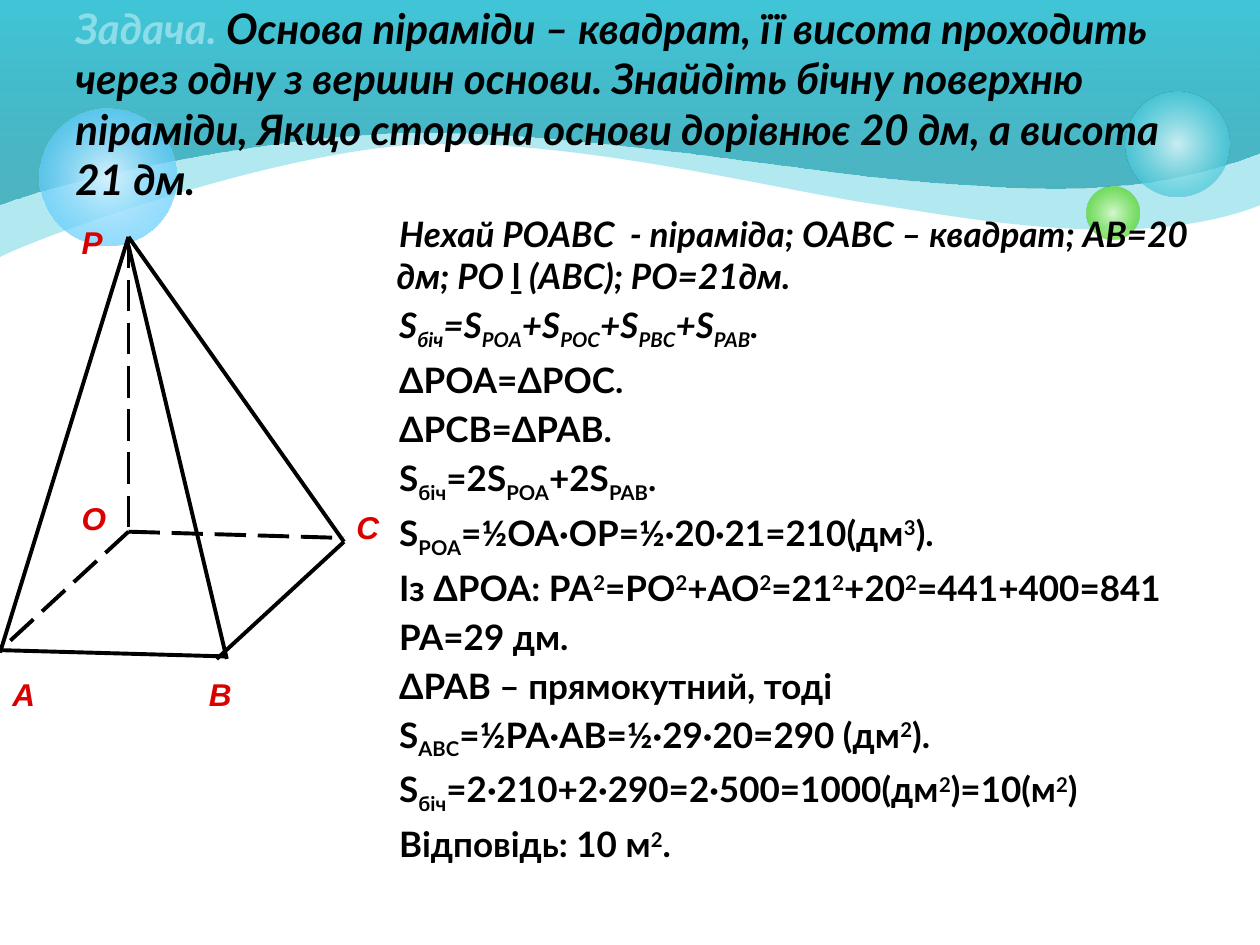
from lxml import etree
from pptx import Presentation
from pptx.dml.color import RGBColor
from pptx.enum import dml, shapes, text
from pptx.oxml import parse_xml
from pptx.oxml.ns import nsdecls, qn
from pptx.util import Inches, Pt

COLORS = {"black": "000000", "red": "DA0000", "pale": "8CDDE8",
          "aqua": "40C6D8", "teal": "249EAE", "mist": "D9F4F7",
          "lime": "4CD416", "lime_mist": "DAFACD",
          "sky": "33BDFB", "sky_mist": "D6F2FE"}

TITLE = [("Задача. ", "pale"),
         ("Основа піраміди – квадрат, її висота проходить через одну з вершин "
          "основи. Знайдіть бічну поверхню піраміди, Якщо сторона основи "
          "дорівнює 20 дм, а висота 21 дм.", "black")]

# Pieces are split at "|"; a first sign _ lowers, ^ raises, ~ sets upright
SOLUTION = [
    ("Нехай РOABC  - піраміда; ОАВС – квадрат; АВ=20 дм; РО |~ḻ |(АВС); РО=21дм.", True),
    ("S|_біч|=S|_РОА|+S|_РОС|+S|_РВС|+S|_РАВ|.", True),
    ("ΔРОА=ΔРОС.", False),
    ("ΔРСВ=ΔРАВ.", False),
    ("S|_біч|=2S|_РОА|+2S|_РАВ|.", False),
    ("S|_РОА|=½ОА·ОР=½·20·21=210(дм|^3|).", False),
    ("Із ΔРОА: РА|^2|=РО|^2|+АО|^2|=21|^2|+20|^2|=441+400=841", False),
    ("РА=29 дм.", False),
    ("ΔРАВ – прямокутний, тоді", False),
    ("S|_АВС|=½РА·АВ=½·29·20=290 (дм|^2|).", False),
    ("S|_біч|=2·210+2·290=2·500=1000(дм|^2|)=10(м|^2|)", False),
    ("Відповідь: 10 м|^2|.", False),
]
BASELINE = {"_": "-25000", "^": "30000"}

# Each wave: left depth, Bezier points of its lower edge, gradient stops
WAVES = [
    (2.04, [(0.33, 1.87), (2.14, 1.22), (3.28, 1.15),
            (4.43, 1.08), (6.06, 1.48), (6.87, 1.61),
            (7.68, 1.73), (9.02, 2.01), (10, 1.63)],
     [(0, "aqua", 40), (100, "aqua", 40)]),
    (1.62, [(0.45, 1.44), (2.03, 1.08), (3.26, 1.05),
            (4.49, 1.02), (6.58, 1.39), (7.37, 1.44),
            (8.16, 1.49), (9.02, 1.59), (10, 1.21)],
     [(0, "teal", 69), (100, "aqua", 100)]),
]
BUBBLES = [  # left, top, diameter, gradient stops
    (8.93, 0.73, 0.83, [(0, "mist", 90), (76, "aqua", 70)]),
    (8.62, 1.48, 0.42, [(0, "lime_mist", 90), (76, "lime", 70)]),
    (0.31, 0.86, 1.09, [(0, "sky_mist", 100), (100, "sky", 54)]),
]
EDGES = [  # start, end, hidden
    ((0, 5.16), (1.8, 5.21), False),
    ((1.02, 4.22), (0, 5.16), True),
    ((1.02, 4.22), (2.73, 4.27), True),
    ((2.73, 4.3), (1.72, 5.23), False),
    ((1.02, 1.88), (1.02, 4.24), True),
    ((1.02, 1.88), (0, 5.18), False),
    ((1.02, 1.95), (1.8, 5.23), False),
    ((1.02, 1.88), (2.73, 4.3), False),
]
VERTICES = [("P", 0.55, 1.72), ("O", 0.55, 3.91), ("А", 0, 5.31),
            ("В", 1.56, 5.31), ("С", 2.73, 3.98)]


def rgb(name):
    return RGBColor.from_string(COLORS[name])


def add_wave(slide, depth, curve):
    """Outline a wave, then join each three edge points into one Bezier curve."""
    fb = slide.shapes.build_freeform(0, 0, scale=Inches(0.01))
    corners = [(0, depth), *curve, (10.01, 0)]
    fb.add_line_segments([(round(x * 100), round(y * 100)) for x, y in corners])
    sp = fb.convert_to_shape()
    lines = list(sp._element.iter(qn("a:lnTo")))[1:1 + len(curve)]
    for i in range(0, len(lines), 3):
        bezier = parse_xml(f'<a:cubicBezTo {nsdecls("a")}/>')
        lines[i].addprevious(bezier)
        for line in lines[i:i + 3]:
            bezier.append(line[0])
            line.getparent().remove(line)
    return sp


def paint(sp, stops, direction):
    """Fill a shape with a translucent gradient, without line or shadow."""
    sp.shadow.inherit = False
    sp.line.fill.background()
    gs = "".join(f'<a:gs pos="{pos * 1000}"><a:srgbClr val="{COLORS[c]}">'
                 f'<a:alpha val="{alpha * 1000}"/></a:srgbClr></a:gs>'
                 for pos, c, alpha in stops)
    fill = parse_xml(f'<a:gradFill {nsdecls("a")} rotWithShape="1">'
                     f'<a:gsLst>{gs}</a:gsLst>{direction}</a:gradFill>')
    sp._element.spPr.find(qn("a:ln")).addprevious(fill)


def add_run(p, content, color="black", **formats):
    r = p.add_run()
    r.text = content
    for key, value in {"name": "Lato", "bold": True, "italic": True, **formats}.items():
        setattr(r.font, key, value)
    r.font.color.rgb = rgb(color)
    return r


def add_box(slide, x, y, w, h, **formats):
    tf = slide.shapes.add_textbox(*map(Inches, (x, y, w, h))).text_frame
    for key, value in {"word_wrap": True, **formats}.items():
        setattr(tf, key, value)
    return tf


prs = Presentation()
prs.slide_width, prs.slide_height = Inches(10), Inches(7.5)
slide = prs.slides.add_slide(prs.slide_layouts[6])

# Waves along the top
for depth, curve, stops in WAVES:
    paint(add_wave(slide, depth, curve), stops,
          '<a:lin ang="16200000" scaled="0"/>')

# Bubbles
for x, y, d, stops in BUBBLES:
    sp = slide.shapes.add_shape(shapes.MSO_SHAPE.OVAL, *map(Inches, (x, y, d, d)))
    paint(sp, stops, '<a:path path="circle"><a:fillToRect l="50000" t="50000" '
                     'r="50000" b="50000"/></a:path>')

# Solution
tf = add_box(slide, 3.05, 1.64, 6.72, 5.86)
for i, (line, italic) in enumerate(SOLUTION):
    p = tf.paragraphs[0] if i == 0 else tf.add_paragraph()
    p.space_before = Pt(4)
    p._p.get_or_add_pPr().set("indent", str(Inches(0.02)))
    for piece in line.split("|"):
        mark = piece[0] if piece[0] in "_^~" else ""
        r = add_run(p, piece[len(mark):], size=Pt(20), italic=italic and mark != "~")
        if mark in BASELINE:
            r._r.get_or_add_rPr().set("baseline", BASELINE[mark])

# Problem statement
tf = add_box(slide, 0.5, 0, 9, 1.64, vertical_anchor=text.MSO_ANCHOR.MIDDLE)
for content, color in TITLE:
    add_run(tf.paragraphs[0], content, color, size=Pt(24))

# Pyramid edges
for start, end, hidden in EDGES:
    ln = slide.shapes.add_connector(shapes.MSO_CONNECTOR.STRAIGHT,
                                    *map(Inches, start + end))
    ln.line.color.rgb = rgb("black")
    ln.line.width = Pt(2.25)
    if hidden:
        ln.line.dash_style = dml.MSO_LINE.LONG_DASH
    etree.SubElement(ln._element.spPr, qn("a:effectLst"))

# Vertex labels
for name, x, y in VERTICES:
    tf = add_box(slide, x, y, 0.38, 0.4, word_wrap=False,
                 auto_size=text.MSO_AUTO_SIZE.SHAPE_TO_FIT_TEXT)
    add_run(tf.paragraphs[0], name, "red", name="Arial", size=Pt(18))

prs.save("out.pptx")
